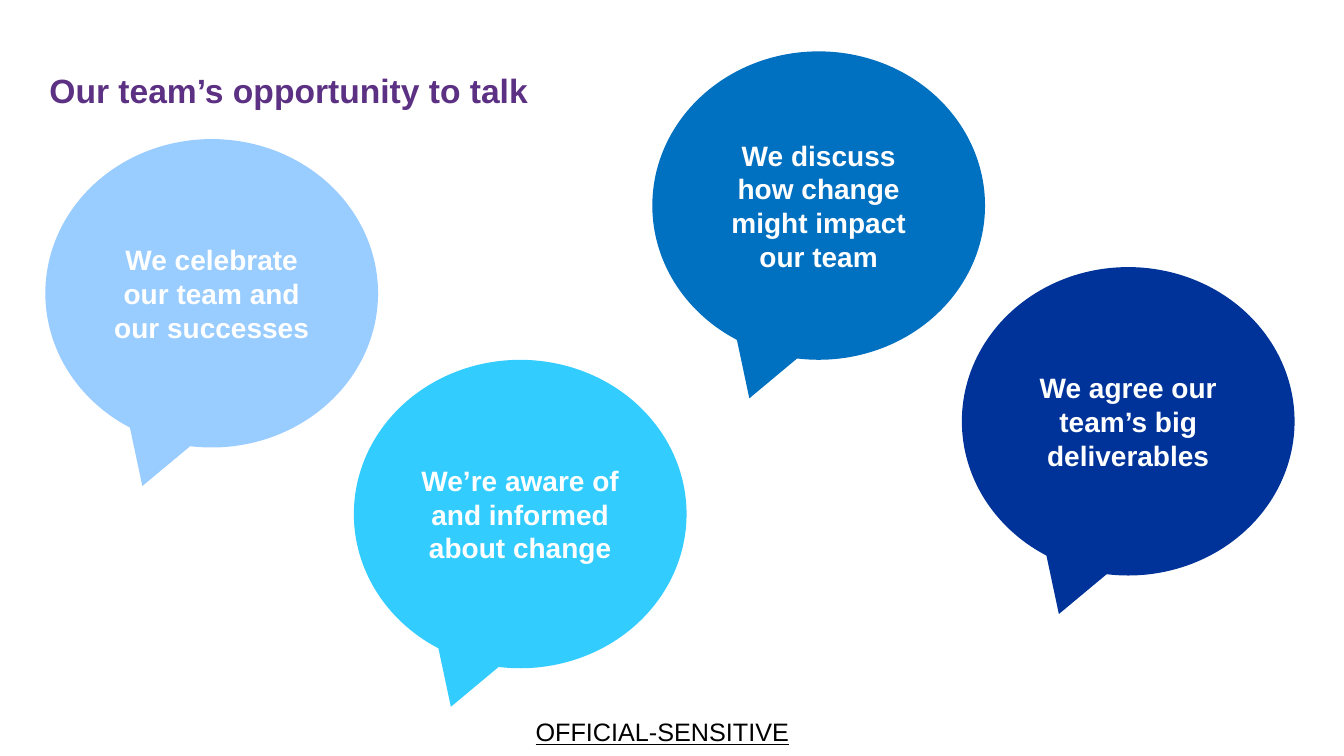
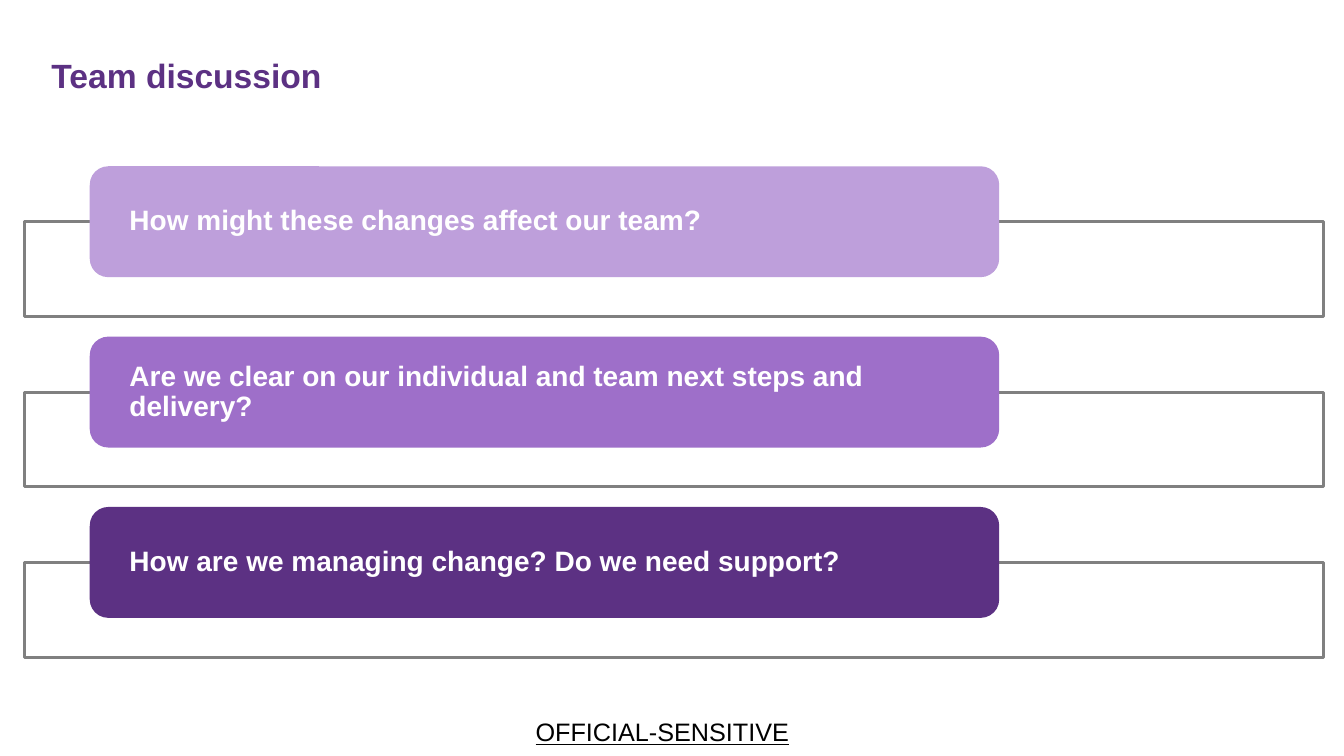
from dataclasses import dataclass

from pptx import Presentation
from pptx.dml.color import RGBColor
from pptx.enum.shapes import MSO_SHAPE
from pptx.enum.text import MSO_ANCHOR, MSO_AUTO_SIZE, PP_ALIGN
from pptx.presentation import Presentation as Deck
from pptx.shapes.autoshape import Shape
from pptx.slide import Slide
from pptx.util import Emu, Pt

CALLOUT = MSO_SHAPE.OVAL_CALLOUT
RECT = MSO_SHAPE.RECTANGLE
ROUND_RECT = MSO_SHAPE.ROUNDED_RECTANGLE
MIDDLE = MSO_ANCHOR.MIDDLE
LEFT = PP_ALIGN.LEFT
CENTER = PP_ALIGN.CENTER
FIT_SHAPE = MSO_AUTO_SIZE.SHAPE_TO_FIT_TEXT

EMU_PER_PX = 9144
SLIDE_W, SLIDE_H = 1333, 750
FONT = "Arial"
PURPLE = "5C3183"
WHITE = "FFFFFF"
BLACK = "000000"
GREY = "808080"

BUBBLE_W, BUBBLE_H = 330, 306
ROW_TOP, ROW_STEP = 165, 169
BAR_X, BAR_W, BAR_H = 89, 902, 110
FRAME_X, FRAME_W, FRAME_H = 24, 1289, 94
BAR_INSET = 34


@dataclass(frozen=True)
class Box:
    x: int
    y: int
    w: int
    h: int


@dataclass(frozen=True)
class Bubble:
    x: int
    y: int
    fill: str
    text: str


@dataclass(frozen=True)
class Question:
    fill: str
    text: str


BUBBLES = [
    Bubble(45, 138, "99CCFF", "We celebrate our team and our successes"),
    Bubble(647, 51, "0070C0", "We discuss how change might impact our team"),
    Bubble(351, 357, "33CCFF", "We’re aware of and informed about change"),
    Bubble(954, 265, "003399", "We agree our team’s big deliverables"),
]

QUESTIONS = [
    Question("BE9FDB", "How might these changes affect our team?"),
    Question("9E6FC9", "Are we clear on our individual and team next steps and delivery?"),
    Question(PURPLE, "How are we managing change? Do we need support?"),
]


def px(n: int) -> Emu:
    return Emu(n * EMU_PER_PX)


def rgb(color: str) -> RGBColor:
    return RGBColor.from_string(color)


def place(box: Box) -> tuple[Emu, Emu, Emu, Emu]:
    return px(box.x), px(box.y), px(box.w), px(box.h)


def set_insets(sp: Shape, side: int) -> None:
    tf = sp.text_frame
    tf.margin_left = tf.margin_right = px(side)
    tf.margin_top = tf.margin_bottom = 0


def write(sp: Shape, text: str, size: int, color: str, align: PP_ALIGN,
          bold: bool = True, underline: bool = False, spacing: float = 1.0) -> None:
    tf = sp.text_frame
    tf.word_wrap = True
    tf.vertical_anchor = MIDDLE
    p = tf.paragraphs[0]
    p.alignment = align
    p.line_spacing = spacing
    r = p.add_run()
    r.text = text
    r.font.name = FONT
    r.font.size = Pt(size)
    r.font.bold = bold
    r.font.underline = underline
    r.font.color.rgb = rgb(color)


def add_shape(s: Slide, kind: MSO_SHAPE, box: Box, fill: str, line: str | None = None) -> Shape:
    sp = s.shapes.add_shape(kind, *place(box))
    sp.shadow.inherit = False
    sp.fill.solid()
    sp.fill.fore_color.rgb = rgb(fill)
    if line:
        sp.line.color.rgb = rgb(line)
        sp.line.width = Pt(2.25)
    else:
        sp.line.fill.background()
    return sp


def add_footer(s: Slide) -> None:
    sp = s.shapes.add_textbox(*place(Box(520, 706, 274, 40)))
    write(sp, "OFFICIAL-SENSITIVE", 18, BLACK, CENTER, bold=False, underline=True)
    sp.text_frame.word_wrap = False
    sp.text_frame.auto_size = FIT_SHAPE


def add_slide(prs: Deck, title: str, box: Box) -> Slide:
    s = prs.slides.add_slide(prs.slide_layouts[6])
    add_footer(s)
    sp = s.shapes.add_textbox(*place(box))
    set_insets(sp, 0)
    write(sp, title, 24, PURPLE, LEFT, spacing=0.9)
    return s


def add_bubble(s: Slide, bubble: Bubble) -> None:
    sp = add_shape(s, CALLOUT, Box(bubble.x, bubble.y, BUBBLE_W, BUBBLE_H), bubble.fill)
    write(sp, bubble.text, 20, WHITE, CENTER)


def add_question(s: Slide, question: Question, y: int) -> None:
    add_shape(s, RECT, Box(FRAME_X, y + BAR_H // 2, FRAME_W, FRAME_H), WHITE, GREY)
    bar = add_shape(s, ROUND_RECT, Box(BAR_X, y, BAR_W, BAR_H), question.fill)
    set_insets(bar, BAR_INSET)
    write(bar, question.text, 20, WHITE, LEFT, spacing=0.9)


def main() -> None:
    prs = Presentation()
    prs.slide_width, prs.slide_height = px(SLIDE_W), px(SLIDE_H)

    s = add_slide(prs, "Our team’s opportunity to talk", Box(49, 19, 1237, 145))
    for bubble in BUBBLES:
        add_bubble(s, bubble)

    s = add_slide(prs, "Team discussion", Box(51, 42, 1175, 69))
    for i, question in enumerate(QUESTIONS):
        add_question(s, question, ROW_TOP + i * ROW_STEP)

    prs.save("out.pptx")


if __name__ == "__main__":
    main()
